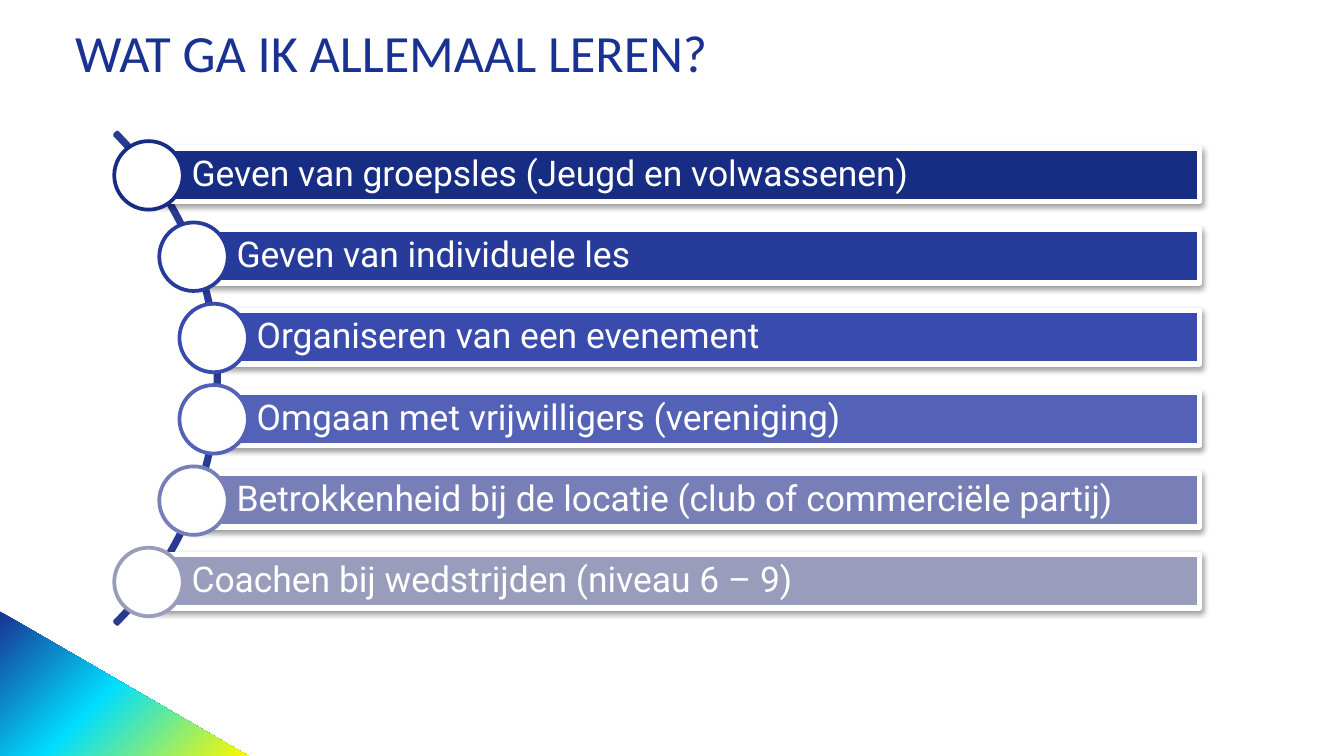
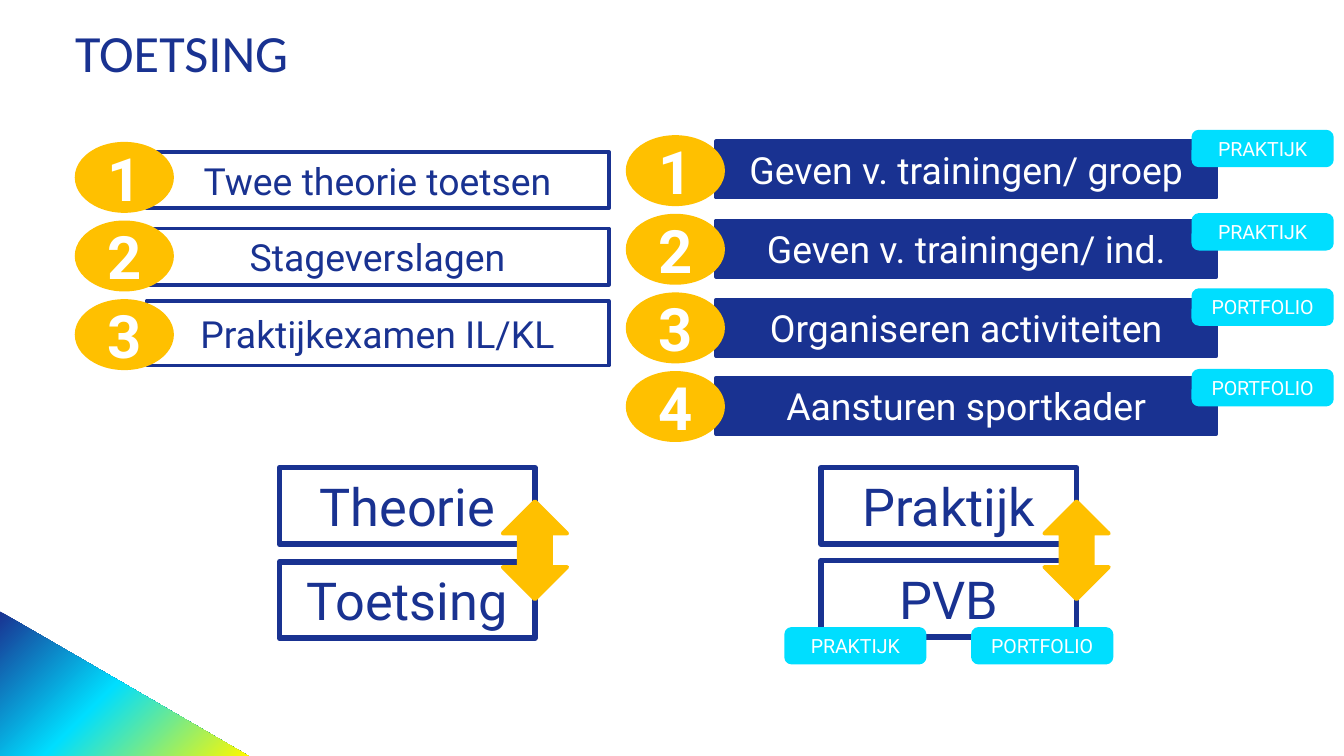
from dataclasses import dataclass
from typing import NamedTuple, Optional

from lxml import etree
from pptx import Presentation
from pptx.dml.color import RGBColor
from pptx.enum.shapes import MSO_SHAPE
from pptx.enum.text import MSO_ANCHOR, MSO_AUTO_SIZE, PP_ALIGN
from pptx.oxml import parse_xml
from pptx.oxml.ns import nsdecls, qn
from pptx.shapes.autoshape import Shape
from pptx.slide import Slide
from pptx.util import Inches, Pt

RECT = MSO_SHAPE.RECTANGLE
PILL = MSO_SHAPE.ROUNDED_RECTANGLE
OVAL = MSO_SHAPE.OVAL
ARC = MSO_SHAPE.BLOCK_ARC
ARROW = MSO_SHAPE.UP_DOWN_ARROW
LEFT, CENTER = PP_ALIGN.LEFT, PP_ALIGN.CENTER
MIDDLE, TOP = MSO_ANCHOR.MIDDLE, MSO_ANCHOR.TOP
GROW = MSO_AUTO_SIZE.SHAPE_TO_FIT_TEXT

WIDTH, HEIGHT = Inches(10), Inches(5.625)
COLS, ROWS = 100, 56.25


@dataclass(frozen=True)
class Theme:
    navy: str = "193291"
    cyan: str = "00DEFF"
    yellow: str = "FFF800"
    gold: str = "FFC000"
    white: str = "FFFFFF"
    arc: str = "293A93"
    bars: tuple = ("172D84", "263B9A", "394BAC", "5361B6", "787FB7", "999CBB")
    head: str = "Calibri"
    body: str = "Roboto"
    title: float = 28
    topic: float = 19
    step: float = 20
    digit: float = 32
    block: float = 28
    tag: float = 10.5


THEME = Theme()


class Box(NamedTuple):
    """A place on the slide, in grid columns and rows."""
    col: float
    row: float
    wide: float
    high: float


class Look(NamedTuple):
    fill: Optional[str]
    line: str
    weight: float
    ink: str = THEME.white
    size: float = THEME.step
    bold: bool = False


class Topic(NamedTuple):
    text: str
    col: float


class Step(NamedTuple):
    text: str
    row: float
    high: float = 4.2


class Tag(NamedTuple):
    text: str
    col: float
    row: float


class Stack(NamedTuple):
    """Two blocks above each other, tied by an arrow."""
    col: float
    upper: str
    lower: str
    base: float


OPEN = Look(THEME.white, THEME.navy, 2, THEME.navy)
SOLID = Look(THEME.navy, THEME.navy, 2)
BLOCK = Look(None, THEME.navy, 3, THEME.navy, THEME.block)
BADGE = Look(THEME.gold, THEME.gold, 2, size=THEME.digit, bold=True)
LABEL = Look(THEME.cyan, THEME.cyan, 2, size=THEME.tag)

TOPICS = (
    Topic("Geven van groepsles (Jeugd en volwassenen)", 11.05),
    Topic("Geven van individuele les", 14.4),
    Topic("Organiseren van een evenement", 15.9),
    Topic("Omgaan met vrijwilligers (vereniging)", 15.9),
    Topic("Betrokkenheid bij de locatie (club of commerciële partij)", 14.4),
    Topic("Coachen bij wedstrijden (niveau 6 – 9)", 11.05),
)
THEORY = (
    Step("Twee theorie toetsen", 11.3),
    Step("Stageverslagen", 17),
    Step("Praktijkexamen IL/KL", 22.4, 4.8),
)
FIELD = (
    Step("Geven v. trainingen/ groep", 10.5),
    Step("Geven v. trainingen/ ind.", 16.4),
    Step("Organiseren activiteiten", 22.3),
    Step("Aansturen sportkader", 28.1),
)
TAGS = (
    Tag("PRAKTIJK", 88.8, 9.8),
    Tag("PRAKTIJK", 88.8, 16),
    Tag("PORTFOLIO", 88.8, 21.6),
    Tag("PORTFOLIO", 88.8, 27.6),
    Tag("PRAKTIJK", 58.5, 46.8),
    Tag("PORTFOLIO", 72.4, 46.8),
)
STACKS = (
    Stack(20.8, "Theorie", "Toetsing", 41.8),
    Stack(61.1, "Praktijk", "PVB", 41.7),
)


def across(cols: float) -> int:
    return round(WIDTH * cols / COLS)


def down(rows: float) -> int:
    return round(HEIGHT * rows / ROWS)


def place(box: Box) -> tuple:
    return across(box.col), down(box.row), across(box.wide), down(box.high)


def write(shape: Shape, text: str, ink: str, size: float, face: str = THEME.body,
          bold: bool = False, align: PP_ALIGN = CENTER) -> None:
    frame = shape.text_frame
    frame.text = text
    frame.word_wrap = True
    frame.vertical_anchor = MIDDLE
    para = frame.paragraphs[0]
    para.alignment = align
    font = para.runs[0].font
    font.name, font.size, font.bold = face, Pt(size), bold
    font.color.rgb = RGBColor.from_string(ink)


def draw(slide: Slide, kind: MSO_SHAPE, box: Box, look: Look, text: str = "") -> Shape:
    shape = slide.shapes.add_shape(kind, *place(box))
    shape.shadow.inherit = False
    if look.fill:
        shape.fill.solid()
        shape.fill.fore_color.rgb = RGBColor.from_string(look.fill)
    else:
        shape.fill.background()
    shape.line.color.rgb = RGBColor.from_string(look.line)
    shape.line.width = Pt(look.weight)
    if text:
        write(shape, text, look.ink, look.size, bold=look.bold)
    return shape


def shade(shape: Shape) -> None:
    """Cast a soft shadow straight down."""
    effects = shape.element.spPr.find(qn("a:effectLst"))
    cast = etree.SubElement(effects, qn("a:outerShdw"), blurRad=str(Pt(3.1)),
                            dist=str(Pt(1.6)), dir="5400000", rotWithShape="0")
    tint = etree.SubElement(cast, qn("a:srgbClr"), val="000000")
    etree.SubElement(tint, qn("a:alpha"), val="38000")


def corner(slide: Slide) -> None:
    """Draw the gradient triangle at the lower left."""
    top, base, right = down(45.5), down(ROWS), across(18.5)
    pen = slide.shapes.build_freeform(0, top)
    pen.add_line_segments([(right, base), (0, base)], close=True)
    shape = pen.convert_to_shape()
    shape.shadow.inherit = False
    shape.line.fill.background()
    stops = ((0, THEME.navy), (48, THEME.cyan), (100, THEME.yellow))
    marks = "".join(f'<a:gs pos="{pos * 1000}"><a:srgbClr val="{tint}"/></a:gs>'
                    for pos, tint in stops)
    blend = parse_xml(f'<a:gradFill {nsdecls("a")}><a:gsLst>{marks}</a:gsLst>'
                      '<a:lin ang="2700000" scaled="0"/></a:gradFill>')
    shape.element.spPr.find(qn("a:custGeom")).addnext(blend)


def start(deck: Presentation, title: str) -> Slide:
    slide = deck.slides.add_slide(deck.slide_layouts[6])
    corner(slide)
    head = slide.shapes.add_textbox(*place(Box(4.8, 1.2, 79.8, 5.2)))
    write(head, title, THEME.navy, THEME.title, THEME.head, align=LEFT)
    head.text_frame.margin_left = Inches(0.08)
    return slide


def topics(slide: Slide) -> None:
    arc = draw(slide, ARC, Box(-35.4, 2.3, 51.7, 51.7), Look(None, THEME.arc, 2))
    for spot, value in enumerate((189, 27, 0.005)):
        arc.adjustments[spot] = value
    pitch, edge, bead = 6.05, 89.25, 5.1
    for place_no, (topic, tint) in enumerate(zip(TOPICS, THEME.bars)):
        row = 11 + place_no * pitch
        bar = draw(slide, RECT, Box(topic.col, row, edge - topic.col, 4),
                   Look(tint, THEME.white, 3))
        shade(bar)
        write(bar, topic.text, THEME.white, THEME.topic, align=LEFT)
        frame = bar.text_frame
        frame.margin_left, frame.margin_right = Inches(0.32), Inches(0.05)
        frame.paragraphs[0].line_spacing = 0.9
        draw(slide, OVAL, Box(topic.col - bead / 2, row - 0.5, bead, bead),
             Look(THEME.white, tint, 2))


def steps(slide: Slide, items: tuple, col: float, wide: float, look: Look,
          badge: Box) -> None:
    """Draw a column of bars, each with a numbered badge at its left."""
    for item in items:
        draw(slide, RECT, Box(col, item.row, wide, item.high), look, item.text)
    for count in range(len(items)):
        spot = badge._replace(row=badge.row + count * 5.85)
        draw(slide, OVAL, spot, BADGE, str(count + 1))


def stack(slide: Slide, item: Stack) -> None:
    for text, row in ((item.upper, 34.8), (item.lower, item.base)):
        block = draw(slide, RECT, Box(item.col, row, 19, 5.7), BLOCK, text)
        block.text_frame.vertical_anchor = TOP
        block.text_frame.auto_size = GROW
    draw(slide, ARROW, Box(item.col + 16.6, 37.3, 4.8, 7.3), BADGE)


def main() -> None:
    deck = Presentation()
    deck.slide_width, deck.slide_height = WIDTH, HEIGHT

    topics(start(deck, "WAT GA IK ALLEMAAL LEREN?"))

    tests = start(deck, "TOETSING")
    steps(tests, THEORY, 10.9, 34.4, OPEN, Box(5.7, 10.7, 7.1, 5))
    steps(tests, FIELD, 53.3, 37.2, SOLID, Box(46.7, 10.2, 7.1, 5))
    for item in STACKS:
        stack(tests, item)
    for tag in TAGS:
        draw(tests, PILL, Box(tag.col, tag.row, 10.3, 2.5), LABEL, tag.text)

    deck.save("out.pptx")


if __name__ == "__main__":
    main()
